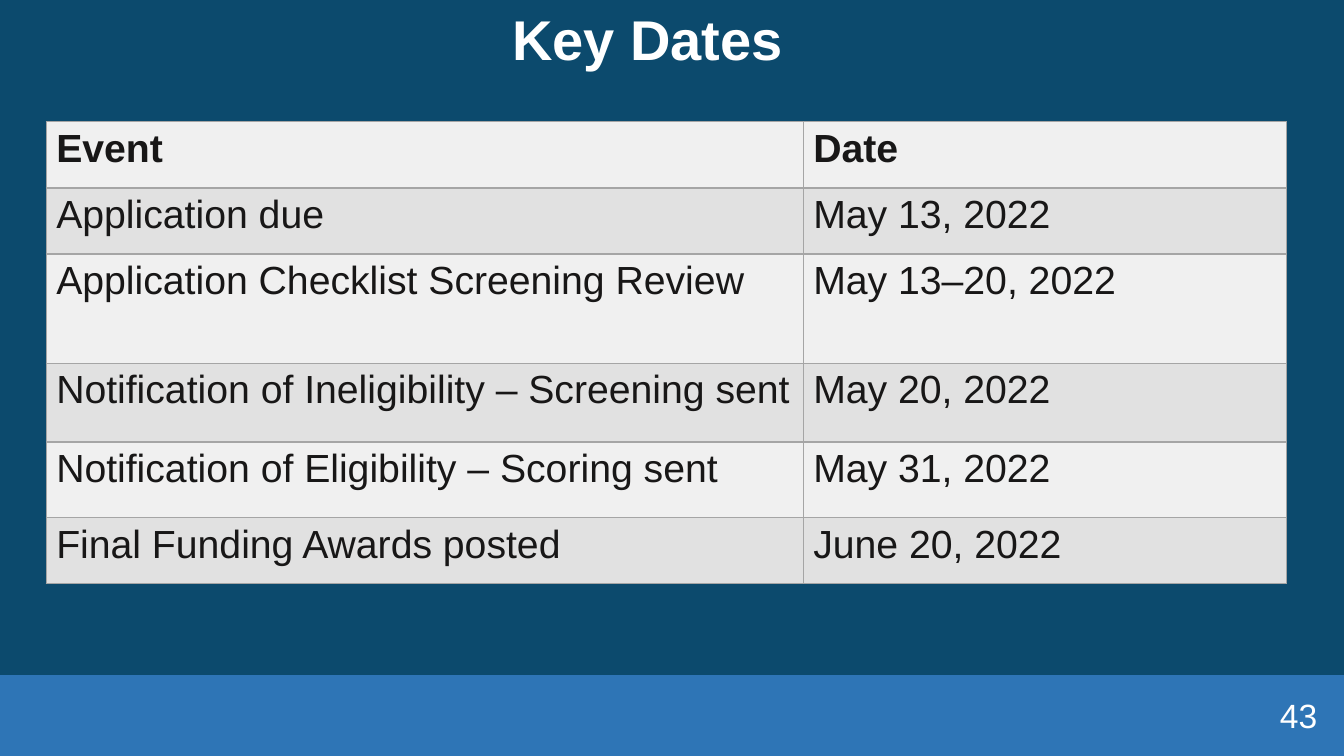
from lxml import etree
from pptx import Presentation
from pptx.dml.color import RGBColor
from pptx.enum.shapes import MSO_SHAPE
from pptx.enum.text import MSO_ANCHOR, PP_ALIGN
from pptx.oxml import parse_xml
from pptx.oxml.ns import nsdecls
from pptx.util import Pt

PX = 9525
COLORS = {
    "background": "0C4A6D",
    "band": "2E75B6",
    "light_row": "F0F0F0",
    "dark_row": "E1E1E1",
    "border": "A5A5A5",
    "ink": "181717",
    "white": "FFFFFF",
}


def rgb(name):
    return RGBColor.from_string(COLORS[name])


def write(frame, text, size, color, bold=False, align=PP_ALIGN.LEFT):
    paragraph = frame.paragraphs[0]
    paragraph.text = text
    paragraph.alignment = align
    font = paragraph.runs[0].font
    for attribute, value in {"name": "Arial", "size": Pt(size), "bold": bold}.items():
        setattr(font, attribute, value)
    font.color.rgb = rgb(color)


deck = Presentation()
deck.slide_width, deck.slide_height = 1280 * PX, 720 * PX
slide = deck.slides.add_slide(deck.slide_layouts[6])
slide.background.fill.solid()
slide.background.fill.fore_color.rgb = rgb("background")

# Footer band
band = slide.shapes.add_shape(MSO_SHAPE.RECTANGLE, 0, 643 * PX, 1280 * PX, 77 * PX)
band.shadow.inherit = False
band.fill.solid()
band.fill.fore_color.rgb = rgb("band")
band.line.fill.background()

# Title and page number
captions = [
    ("Key Dates", (0, -4, 1233, 88), 40, True, PP_ALIGN.CENTER, 0.9),
    ("43", (976, 662, 288, 38), 24, False, PP_ALIGN.RIGHT, 1.0),
]
for text, box, size, bold, align, spacing in captions:
    frame = slide.shapes.add_textbox(*(length * PX for length in box)).text_frame
    frame.word_wrap = True
    frame.vertical_anchor = MSO_ANCHOR.MIDDLE
    write(frame, text, size, "white", bold, align)
    frame.paragraphs[0].line_spacing = spacing

# Table of dates: event, date, row height
schedule = [
    ("Event", "Date", 63),
    ("Application due", "May 13, 2022", 63),
    ("Application Checklist Screening Review", "May 13–20, 2022", 104),
    ("Notification of Ineligibility – Screening sent", "May 20, 2022", 75),
    ("Notification of Eligibility – Scoring sent", "May 31, 2022", 72),
    ("Final Funding Awards posted", "June 20, 2022", 63),
]
column_widths = [721, 460]
table_height = sum(height for _, _, height in schedule)
dates = slide.shapes.add_table(
    len(schedule), len(column_widths), 44 * PX, 116 * PX,
    sum(column_widths) * PX, table_height * PX,
).table
for column, width in zip(dates.columns, column_widths):
    column.width = width * PX

for row_index, (event, date, height) in enumerate(schedule):
    dates.rows[row_index].height = height * PX
    for column_index, text in enumerate((event, date)):
        cell = dates.cell(row_index, column_index)
        cell.fill.solid()
        cell.fill.fore_color.rgb = rgb("dark_row" if row_index % 2 else "light_row")
        write(cell.text_frame, text, 28, "ink", bold=row_index == 0)
        properties = cell._tc.get_or_add_tcPr()
        for position, side in enumerate("LRTB"):
            border = parse_xml(f'<a:ln{side} {nsdecls("a")} w="{Pt(1)}"/>')
            fill = etree.SubElement(border, border.tag.replace(f"ln{side}", "solidFill"))
            etree.SubElement(
                fill, fill.tag.replace("solidFill", "srgbClr"), val=COLORS["border"]
            )
            properties.insert(position, border)

deck.save("out.pptx")
